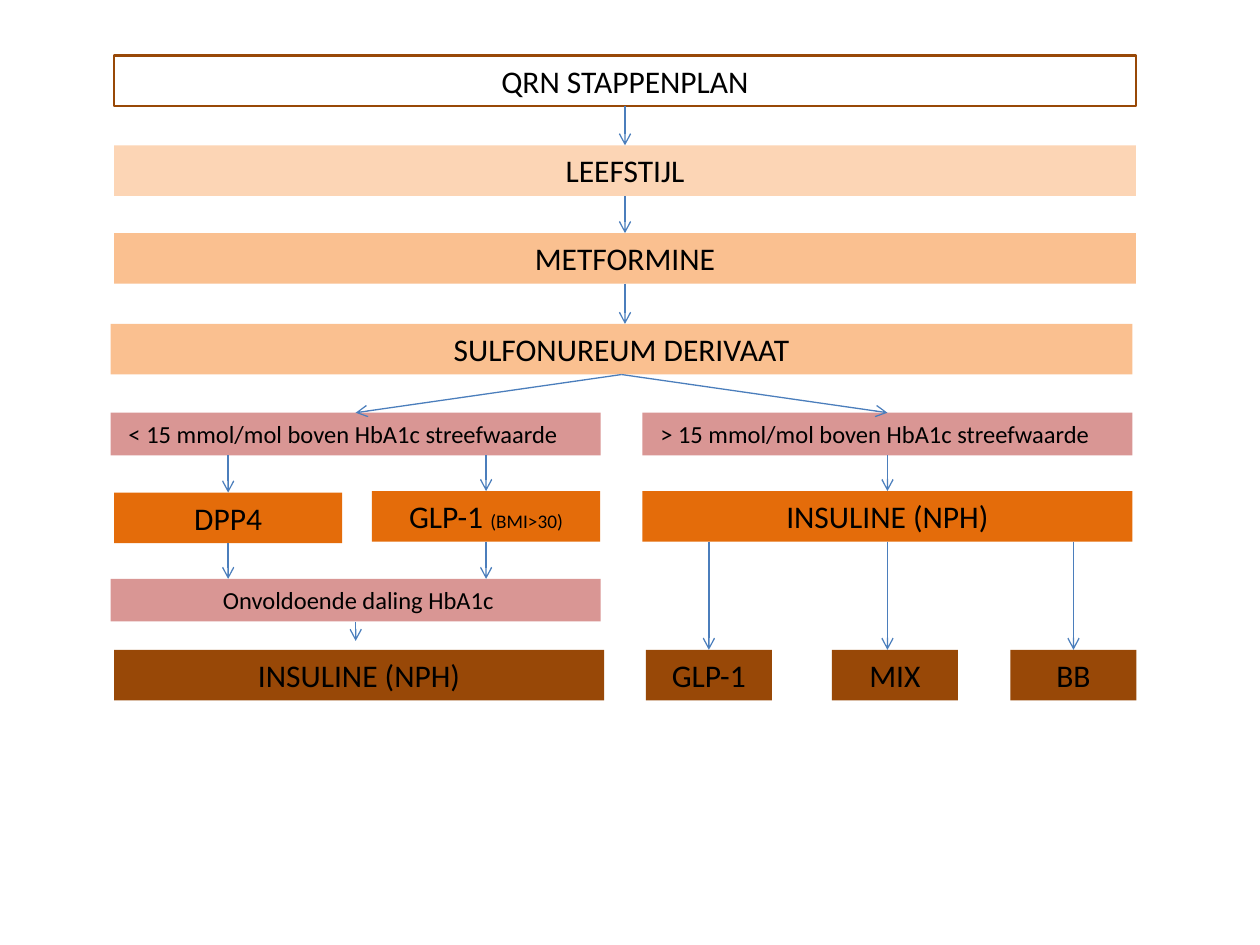
from lxml import etree
from pptx import Presentation
from pptx import util as u
from pptx.dml.color import RGBColor
from pptx.enum import shapes, text
from pptx.oxml import ns

HUES = {
    "white": "FFFFFF", "black": "000000", "pale": "FCD5B5", "peach": "FAC090",
    "rose": "D99694", "orange": "E46C0A", "brown": "984807", "blue": "4B7EBC",
}
FULL, HALF, PAIR, SMALL = 20.6, 9.88, 4.6, 2.54  # box widths
STEP, NOTE = 1.02, 0.86  # box heights
TOP, BOTTOM = 0, 2  # joining sites of a box


def hue(name):
    return RGBColor.from_string(HUES[name])


def middle(box):
    return box.left + box.width // 2


class Chart:
    """Style and drawing methods for one flow chart slide."""

    font = "Calibri"
    slack = u.Cm(0.05)  # how far from the middle an arrow still joins

    def __init__(self, slide):
        self.slide = slide

    def box(self, words, left, top, width, fill, high=STEP, size=18,
            align=text.PP_ALIGN.CENTER, edge=None):
        box = self.slide.shapes.add_shape(
            shapes.MSO_SHAPE.RECTANGLE,
            u.Cm(left), u.Cm(top), u.Cm(width), u.Cm(high))
        box.shadow.inherit = False
        box.fill.solid()
        box.fill.fore_color.rgb = hue(fill)
        if edge:
            box.line.color.rgb = hue(edge)
            box.line.width = u.Pt(1.5)
        else:
            box.line.fill.background()
        frame = box.text_frame
        frame.word_wrap = True
        frame.auto_size = text.MSO_AUTO_SIZE.SHAPE_TO_FIT_TEXT
        frame.vertical_anchor = text.MSO_ANCHOR.TOP
        para = frame.paragraphs[0]
        para.text = words
        para.alignment = align
        para.font.name = self.font
        para.font.size = u.Pt(size)
        para.font.color.rgb = hue("black")
        return box

    def note(self, words, left, top, align=text.PP_ALIGN.LEFT):
        return self.box(words, left, top, HALF, "rose", NOTE, 14, align)

    def arrow(self, start, x, y, end=None, end_x=None):
        """Draw from the bottom of start to (end_x, y), the top of end."""
        end_x = x if end_x is None else end_x
        line = self.slide.shapes.add_connector(
            shapes.MSO_CONNECTOR.STRAIGHT, x, start.top + start.height, end_x, y)
        if abs(x - middle(start)) < self.slack:
            line.begin_connect(start, BOTTOM)
        if end is not None and abs(end_x - middle(end)) < self.slack:
            line.end_connect(end, TOP)
        line.line.color.rgb = hue("blue")
        line.line.width = u.Pt(0.75)
        props = line._element.spPr
        etree.SubElement(props.find(ns.qn("a:ln")), ns.qn("a:tailEnd"), type="arrow")
        etree.SubElement(props, ns.qn("a:effectLst"))

    def link(self, start, end, x=None, end_x=None):
        x = middle(start) if x is None else x
        self.arrow(start, x, end.top, end, end_x)


def main():
    deck = Presentation()
    deck.slide_width, deck.slide_height = u.Cm(25.4), u.Cm(19.05)
    chart = Chart(deck.slides.add_slide(deck.slide_layouts[6]))

    # Shared steps
    title = chart.box("QRN STAPPENPLAN", 2.3, 1.12, FULL, "white", edge="brown")
    life = chart.box("LEEFSTIJL", 2.3, 2.93, FULL, "pale")
    met = chart.box("METFORMINE", 2.3, 4.7, FULL, "peach")
    sulfo = chart.box("SULFONUREUM DERIVAAT", 2.23, 6.53, FULL, "peach")

    # Left branch
    below = chart.note(" < 15 mmol/mol boven HbA1c streefwaarde", 2.23, 8.32)
    dpp = chart.box("DPP4", 2.3, 9.93, PAIR, "orange")
    glp = chart.box("GLP-1 ", 7.5, 9.9, PAIR, "orange")
    small = glp.text_frame.paragraphs[0].add_run()
    small.text = "(BMI>30)"
    small.font.size = u.Pt(11)
    poor = chart.note(" Onvoldoende daling HbA1c", 2.23, 11.67, text.PP_ALIGN.CENTER)
    chart.box("INSULINE (NPH)", 2.3, 13.1, HALF, "brown")

    # Right branch
    above = chart.note(" > 15 mmol/mol boven HbA1c streefwaarde", 12.95, 8.32)
    nph = chart.box("INSULINE (NPH)", 12.95, 9.9, HALF, "orange")
    more, mix, basal = [
        chart.box(words, left, 13.1, SMALL, "brown")
        for words, left in (("GLP-1", 13.02), ("MIX", 16.77), ("BB", 20.37))]

    # Arrows down the shared steps and out to the branches
    for start, end in ((title, life), (life, met), (met, sulfo)):
        chart.link(start, end)
    for end in (below, above):
        chart.link(sulfo, end, end_x=middle(end))

    # Arrows within the branches
    for drug in (dpp, glp):
        chart.link(below, drug, middle(drug))
        chart.link(drug, poor)
    chart.arrow(poor, middle(poor), u.Cm(12.92))
    chart.link(above, nph)
    chart.link(nph, mix)
    for end in (more, basal):
        chart.link(nph, end, middle(end))

    deck.save("out.pptx")


if __name__ == "__main__":
    main()
